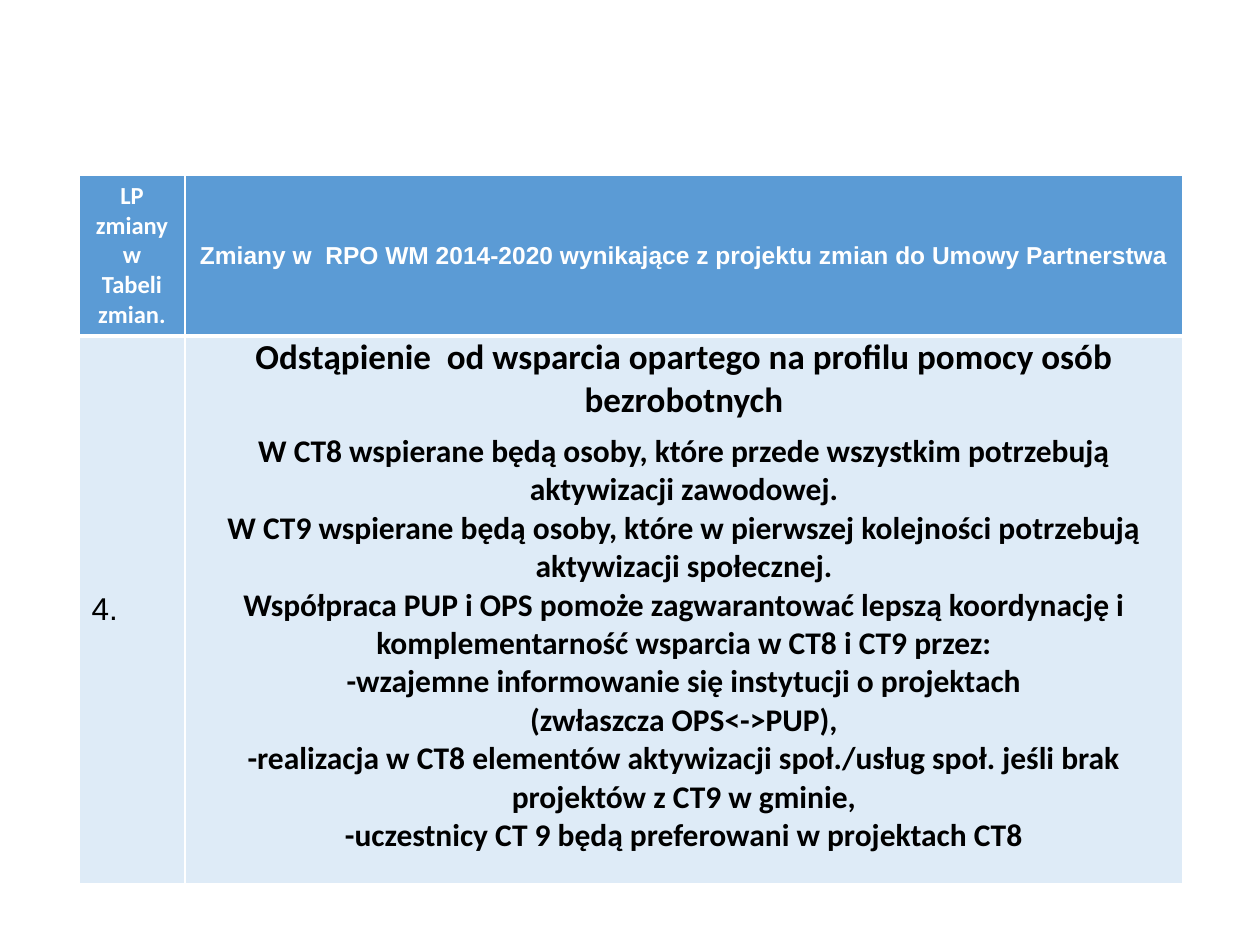
from lxml import etree
from pptx import Presentation
from pptx.dml.color import RGBColor
from pptx.enum.text import MSO_ANCHOR, PP_ALIGN
from pptx.oxml.ns import qn
from pptx.util import Emu, Pt

CENTER, LEFT = PP_ALIGN.CENTER, PP_ALIGN.LEFT
MIDDLE, TOP = MSO_ANCHOR.MIDDLE, MSO_ANCHOR.TOP
PX_PER_INCH = 126

SLIDE_SIZE = (1260, 945)
TABLE_ORIGIN = (79, 175)
COLUMN_WIDTHS = (106, 998)
ROW_HEIGHTS = (160, 548)

WHITE, BLACK, BLUE, PALE_BLUE = "FFFFFF", "000000", "5B9BD5", "DEEBF7"
THIN, THICK = 1, 3

BODY_TITLE = "Odstąpienie  od wsparcia opartego na profilu pomocy osób bezrobotnych"
BODY_LINES = [
    "W CT8 wspierane będą osoby, które przede wszystkim potrzebują aktywizacji zawodowej.",
    "W CT9 wspierane będą osoby, które w pierwszej kolejności potrzebują aktywizacji społecznej.",
    "Współpraca PUP i OPS pomoże zagwarantować lepszą koordynację i "
    "komplementarność wsparcia w CT8 i CT9 przez:",
    "-wzajemne informowanie się instytucji o projektach\n(zwłaszcza OPS<->PUP),",
    "-realizacja w CT8 elementów aktywizacji społ./usług społ. jeśli brak",
    "projektów z CT9 w gminie,",
    "-uczestnicy CT 9 będą preferowani w projektach CT8",
]


def font_format(name, size, bold=True):
    return {"name": name, "size": Pt(size), "bold": bold}


HEADER_CALIBRI = font_format("Calibri", 14)
HEADER_ARIAL = font_format("Arial", 14)
NUMBER_FONT = font_format("Arial", 18, bold=False)
TITLE_FONT = font_format("Calibri", 20)
LINE_FONT = font_format("Calibri", 18)

# Each cell: alignment, anchor, vertical margin in px, paragraphs (text, font, space after)
CELLS = [
    [
        (CENTER, MIDDLE, 6, [("LP zmiany w Tabeli zmian.", HEADER_CALIBRI, 0)]),
        (CENTER, MIDDLE, 6, [("Zmiany w  RPO WM 2014-2020 wynikające z projektu zmian "
                              "do Umowy Partnerstwa", HEADER_ARIAL, 0)]),
    ],
    [
        (LEFT, MIDDLE, 6, [("4.", NUMBER_FONT, 0)]),
        (CENTER, TOP, 0, [(BODY_TITLE, TITLE_FONT, 6)]
         + [(line, LINE_FONT, 0) for line in BODY_LINES]),
    ],
]

# Each row: fill, text colour, top border, bottom border
ROW_STYLES = [(BLUE, WHITE, THIN, THICK), (PALE_BLUE, BLACK, THICK, THIN)]


def px(length):
    return Emu(round(length * 914400 / PX_PER_INCH))


def color(value):
    return RGBColor.from_string(value)


def add_borders(cell, top, bottom):
    properties = cell._tc.get_or_add_tcPr()
    for side, width in (("L", THIN), ("R", THIN), ("T", top), ("B", bottom)):
        line = etree.SubElement(properties, qn(f"a:ln{side}"), w=str(Pt(width)))
        fill = etree.SubElement(line, qn("a:solidFill"))
        etree.SubElement(fill, qn("a:srgbClr"), val=WHITE)


def fill_text(cell, paragraphs, alignment, text_color):
    frame = cell.text_frame
    for index, (text, font, space_after) in enumerate(paragraphs):
        paragraph = frame.add_paragraph() if index else frame.paragraphs[0]
        paragraph.text = text
        paragraph.alignment = alignment
        paragraph.space_after = Pt(space_after)
        for run in paragraph.runs:
            run.font.color.rgb = color(text_color)
            for attribute, value in font.items():
                setattr(run.font, attribute, value)


def main():
    presentation = Presentation()
    presentation.slide_width, presentation.slide_height = map(px, SLIDE_SIZE)
    slide = presentation.slides.add_slide(presentation.slide_layouts[6])

    table = slide.shapes.add_table(
        len(ROW_HEIGHTS), len(COLUMN_WIDTHS), *map(px, TABLE_ORIGIN),
        px(sum(COLUMN_WIDTHS)), px(sum(ROW_HEIGHTS))).table
    table.horz_banding = False
    for column, width in zip(table.columns, COLUMN_WIDTHS):
        column.width = px(width)

    for row, height, contents, style in zip(table.rows, ROW_HEIGHTS, CELLS, ROW_STYLES):
        row.height = px(height)
        fill, text_color, top, bottom = style
        for cell, (alignment, anchor, margin, paragraphs) in zip(row.cells, contents):
            cell.vertical_anchor = anchor
            cell.margin_top = cell.margin_bottom = px(margin)
            add_borders(cell, top, bottom)
            cell.fill.solid()
            cell.fill.fore_color.rgb = color(fill)
            fill_text(cell, paragraphs, alignment, text_color)

    presentation.save("out.pptx")


if __name__ == "__main__":
    main()
